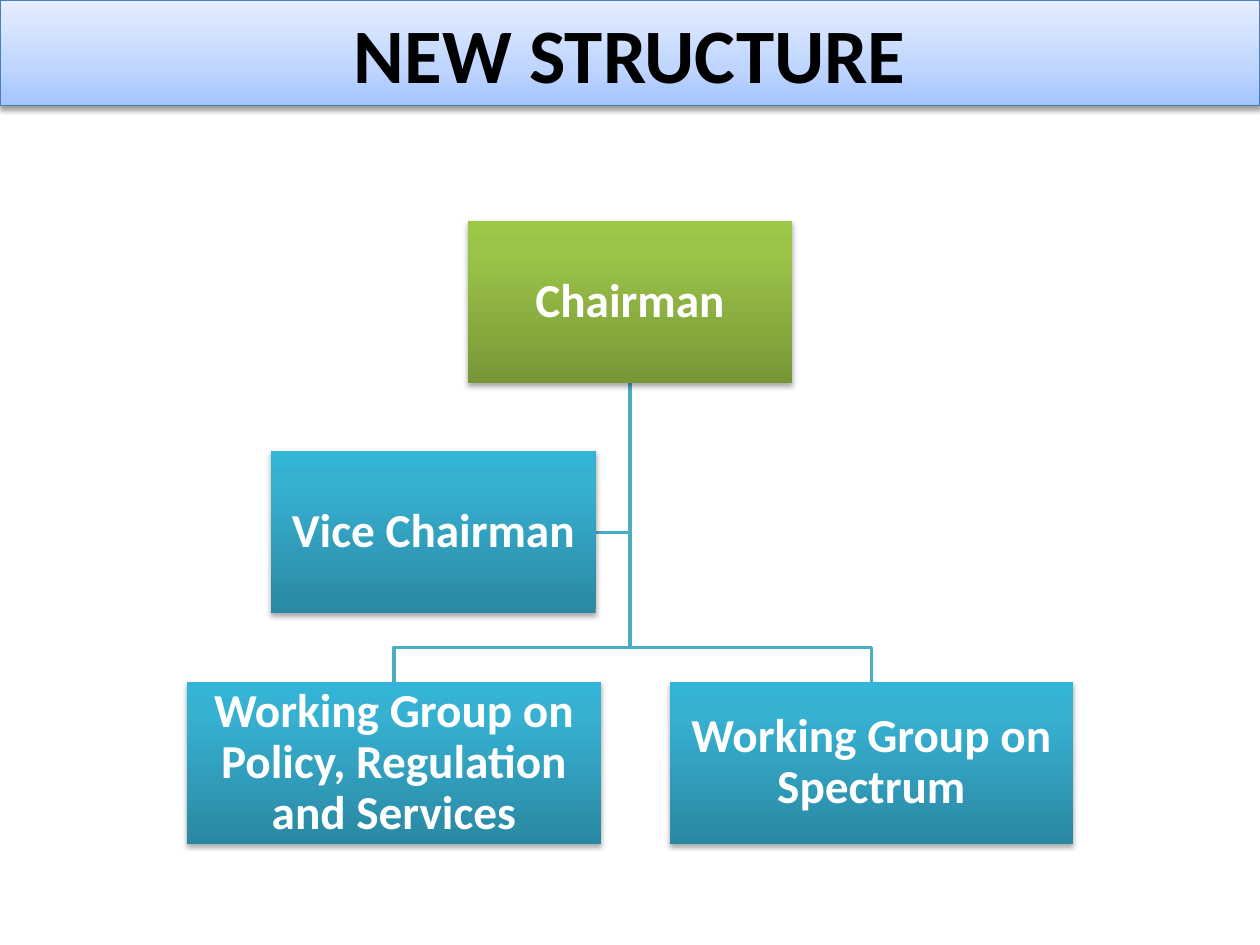
import copy
from dataclasses import dataclass

import pptx
import pptx.dml.color
import pptx.enum.shapes
import pptx.enum.text
import pptx.oxml
import pptx.oxml.ns
import pptx.util

Pt = pptx.util.Pt

GREEN = ((0, "779737"), (0.8, "9BC348"), (1, "9DC746"))
TEAL = ((0, "2A88A2"), (0.8, "37B1D2"), (1, "34B4D6"))
PALE_BLUE = ((0, "A3C4FF"), (0.35, "BFD5FF"), (1, "E5EEFF"))
BRANCH_COLOUR = "4BACC6"

ROW_TOP, ROW_STEP, ROLE_HEIGHT, ROLE_WIDTH = 126.2, 131.7, 92.7, 185.6
TRUNK_X = 360


@dataclass(frozen=True)
class Panel:
    text: str
    left: float
    top: float
    width: float
    height: float
    gradient: tuple
    size: float = 27
    text_colour: str = "FFFFFF"
    outline: str | None = None
    line_spacing: float = 0.9
    inset: float = 1.35
    shadow_alpha: int = 35


def role(text: str, left: float, row: int, width: float = ROLE_WIDTH, gradient: tuple = TEAL) -> Panel:
    return Panel(text, left, ROW_TOP + row * ROW_STEP, width, ROLE_HEIGHT, gradient)


def rgb(hex_colour: str) -> pptx.dml.color.RGBColor:
    return pptx.dml.color.RGBColor.from_string(hex_colour)


def fill_gradient(shape, gradient: tuple) -> None:
    shape.fill.gradient()
    shape.fill.gradient_angle = 90
    stop_list = shape._element.spPr.find(".//" + pptx.oxml.ns.qn("a:gsLst"))
    stop_list.append(copy.deepcopy(stop_list[0]))
    for stop, (position, colour) in zip(shape.fill.gradient_stops, gradient):
        stop.position = position
        stop.color.rgb = rgb(colour)


def add_shadow(shape, alpha: int) -> None:
    shape.shadow.inherit = False
    effects = shape._element.spPr.find(pptx.oxml.ns.qn("a:effectLst"))
    effects.append(pptx.oxml.parse_xml(
        f'<a:outerShdw {pptx.oxml.ns.nsdecls("a")} blurRad="{Pt(3.1)}" dist="{Pt(1.8)}" '
        f'dir="5400000" rotWithShape="0"><a:srgbClr val="000000">'
        f'<a:alpha val="{alpha * 1000}"/></a:srgbClr></a:outerShdw>'))


def draw_panel(slide, panel: Panel) -> None:
    shape = slide.shapes.add_shape(
        pptx.enum.shapes.MSO_SHAPE.RECTANGLE,
        Pt(panel.left), Pt(panel.top), Pt(panel.width), Pt(panel.height))
    fill_gradient(shape, panel.gradient)
    add_shadow(shape, panel.shadow_alpha)
    if panel.outline:
        shape.line.color.rgb = rgb(panel.outline)
        shape.line.width = Pt(0.75)
    else:
        shape.line.fill.background()
    frame = shape.text_frame
    frame.word_wrap = True
    frame.vertical_anchor = pptx.enum.text.MSO_ANCHOR.MIDDLE
    frame.margin_left = frame.margin_right = Pt(panel.inset)
    frame.margin_top = frame.margin_bottom = Pt(panel.inset)
    paragraph = frame.paragraphs[0]
    paragraph.alignment = pptx.enum.text.PP_ALIGN.CENTER
    paragraph.line_spacing = panel.line_spacing
    run = paragraph.add_run()
    run.text = panel.text
    run.font.name = "Calibri"
    run.font.size = Pt(panel.size)
    run.font.bold = True
    run.font.color.rgb = rgb(panel.text_colour)


def draw_branch(slide, points: list[tuple[float, float]]) -> None:
    start, *bends = [(Pt(x), Pt(y)) for x, y in points]
    builder = slide.shapes.build_freeform(*start)
    builder.add_line_segments(bends, close=False)
    branch = builder.convert_to_shape()
    branch.shadow.inherit = False
    branch.fill.background()
    branch.line.color.rgb = rgb(BRANCH_COLOUR)
    branch.line.width = Pt(2)


def main() -> None:
    presentation = pptx.Presentation()
    presentation.slide_width, presentation.slide_height = Pt(720), Pt(540)
    slide = presentation.slides.add_slide(presentation.slide_layouts[6])

    title = Panel("NEW STRUCTURE", 0, 0, 720, 60.3, PALE_BLUE, size=44, text_colour="000000",
                  outline="4A7EBB", line_spacing=1, inset=3.6, shadow_alpha=38)
    chairman = role("Chairman", TRUNK_X - ROLE_WIDTH / 2, 0, gradient=GREEN)
    vice_chairman = role("Vice Chairman", 154.8, 1)
    working_groups = [
        role("Working Group on Policy, Regulation and Services", 106.7, 2, 236.8),
        role("Working Group on Spectrum", 382.6, 2, 230.6),
    ]

    trunk_top = (TRUNK_X, chairman.top + chairman.height)
    vice_middle = vice_chairman.top + vice_chairman.height / 2
    draw_branch(slide, [trunk_top, (TRUNK_X, vice_middle),
                        (vice_chairman.left + vice_chairman.width, vice_middle)])
    for group in working_groups:
        centre = group.left + group.width / 2
        fork = group.top - 19.5
        draw_branch(slide, [trunk_top, (TRUNK_X, fork), (centre, fork), (centre, group.top)])

    for panel in (title, chairman, *working_groups, vice_chairman):
        draw_panel(slide, panel)
    presentation.save("out.pptx")


if __name__ == "__main__":
    main()
